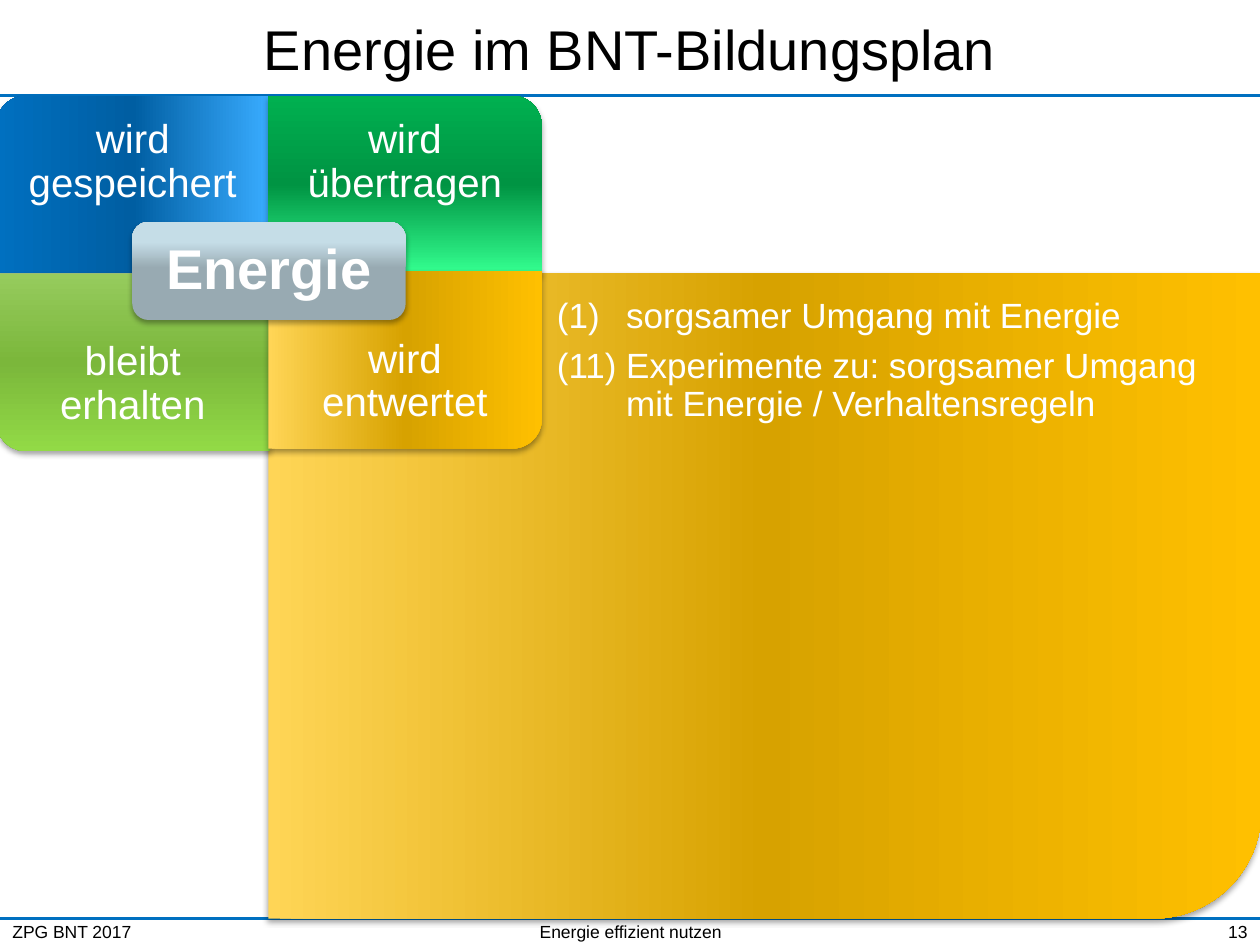
from lxml import etree
from pptx import Presentation
from pptx import util as u
from pptx.dml.color import RGBColor
from pptx.enum import shapes, text
from pptx.oxml import parse_xml
from pptx.oxml.ns import nsdecls, qn
from pptx.util import Inches


class Theme:
    font = "Arial"
    black, white, rule = "000000", "FFFFFF", "0070C0"
    blue = [(0, "39ACFF"), (50, "005EA2"), (100, "0070C0")]
    green = [(0, "34FF90"), (50, "009443"), (100, "00B050")]
    lime = [(0, "96CB5D"), (50, "7BB73B"), (100, "92DA46")]
    gold = [(0, "FFD556"), (50, "D7A200"), (100, "FFC000")]
    grey = [(53, "98AAB2"), (79, "C5DDE7"), (100, "C6DEE9")]
    title_size, list_size, tile_size, footer_size = 32, 20, 23, 10


SHADOW = (
    '<a:effectLst {}><a:outerShdw blurRad="40000" dist="23000" dir="5400000" rotWithShape="0">'
    '<a:srgbClr val="000000"><a:alpha val="35000"/></a:srgbClr></a:outerShdw></a:effectLst>'
).format(nsdecls("a"))

deck = Presentation()
deck.slide_width, deck.slide_height = Inches(10), Inches(7.5)
page = deck.slides.add_slide(deck.slide_layouts[5])


def write(content, at, size, color=Theme.white, align=text.PP_ALIGN.CENTER, bold=False,
          anchor=text.MSO_ANCHOR.MIDDLE, inset=(0.1, 0.05), spacing=None, box=None,
          margin=0, hang=0, after=0):
    """Fill a new text box, or the given one, with one paragraph per line of content."""
    box = box or page.shapes.add_textbox(0, 0, 0, 0)
    box.left, box.top, box.width, box.height = map(Inches, at)
    frame = box.text_frame
    frame.word_wrap = True
    frame.auto_size = text.MSO_AUTO_SIZE.NONE
    frame.vertical_anchor = anchor
    frame.margin_left = frame.margin_right = Inches(inset[0])
    frame.margin_top = frame.margin_bottom = Inches(inset[1])
    for index, line in enumerate(content.split("\n")):
        para = frame.paragraphs[0] if index == 0 else frame.add_paragraph()
        para.alignment = align
        para.line_spacing = spacing
        para.space_after = u.Pt(after)
        if margin:
            props = para._p.get_or_add_pPr()
            props.set("marL", str(Inches(margin + hang)))
            props.set("indent", str(-Inches(hang)))
        span = para.add_run()
        span.text = line
        span.font.name, span.font.size, span.font.bold = Theme.font, u.Pt(size), bold
        span.font.color.rgb = RGBColor.from_string(color)


def add_block(kind, at, stops, turn=0):
    """Add a shaded shape that covers the area `at` once it is turned."""
    left, top, width, height = at
    if turn % 180:
        left, top = left + (width - height) / 2, top + (height - width) / 2
        width, height = height, width
    block = page.shapes.add_shape(kind, *map(Inches, (left, top, width, height)))
    block.rotation = turn
    block.line.fill.background()
    block.fill.gradient()
    shading = block._element.spPr.find(qn("a:gradFill"))
    stop_list = shading.find(qn("a:gsLst"))
    for stop in list(stop_list):
        stop_list.remove(stop)
    for position, color in stops:
        stop = etree.SubElement(stop_list, qn("a:gs"), pos=str(position * 1000))
        etree.SubElement(stop, qn("a:srgbClr"), val=color)
    shading.find(qn("a:lin")).set("ang", str(270 * 60000))
    block._element.spPr.append(parse_xml(SHADOW))


# Rules, title and footer
HEAD, FOOT = 0.76, 7.29
for y in (HEAD, FOOT):
    rule = page.shapes.add_connector(
        shapes.MSO_CONNECTOR.STRAIGHT, 0, Inches(y), Inches(10), Inches(y))
    rule.line.color.rgb = RGBColor.from_string(Theme.rule)
    rule.line.width = u.Pt(1.5)
    etree.SubElement(rule._element.spPr, qn("a:effectLst"))

write("Energie im BNT-Bildungsplan", (0, 0, 10, HEAD), Theme.title_size, Theme.black,
      box=page.shapes.title)
for words, left, width, align in (
    ("ZPG BNT 2017", 0, 2.72, text.PP_ALIGN.LEFT),
    ("Energie effizient nutzen", 3.42, 3.17, text.PP_ALIGN.CENTER),
    ("13", 7.36, 2.64, text.PP_ALIGN.RIGHT),
):
    write(words, (left, FOOT, width, 0.21), Theme.footer_size, Theme.black, align)

# Large panel with the curriculum items
CORNER = shapes.MSO_SHAPE.ROUND_1_RECTANGLE
LEFT, MIDDLE, TILE_W, TILE_H, LABEL_H = -0.03, 2.13, 2.17, 1.41, 1.06
add_block(CORNER, (MIDDLE, 2.17, 7.88, 5.12), Theme.gold, 90)
write("(1)\tsorgsamer Umgang mit Energie\n"
      "(11)\tExperimente zu: sorgsamer Umgang mit Energie / Verhaltensregeln",
      (MIDDLE, 2.19, 7.88, 5.11), Theme.list_size, align=text.PP_ALIGN.LEFT,
      anchor=text.MSO_ANCHOR.TOP, inset=(0.18, 0.18), spacing=0.9,
      margin=2.11, hang=0.55, after=7)

# Four tiles around the central term
for words, left, top, label_top, stops, turn in (
    ("wird gespeichert", LEFT, HEAD, HEAD, Theme.blue, 270),
    ("wird übertragen", MIDDLE, HEAD, HEAD, Theme.green, 0),
    ("bleibt erhalten", LEFT, 2.17, 2.52, Theme.lime, 180),
    ("wird entwertet", MIDDLE, 2.15, 2.5, Theme.gold, 90),
):
    add_block(CORNER, (left, top, TILE_W, TILE_H), stops, turn)
    write(words, (left, label_top, TILE_W, LABEL_H), Theme.tile_size,
          inset=(0.18, 0.18), spacing=0.9)

add_block(shapes.MSO_SHAPE.ROUNDED_RECTANGLE, (1.05, 1.76, TILE_W, 0.78), Theme.grey)
write("Energie", (1.09, 1.8, 2.09, 0.7), Theme.title_size, bold=True,
      inset=(0.13, 0.13), spacing=0.9)

deck.save("out.pptx")
